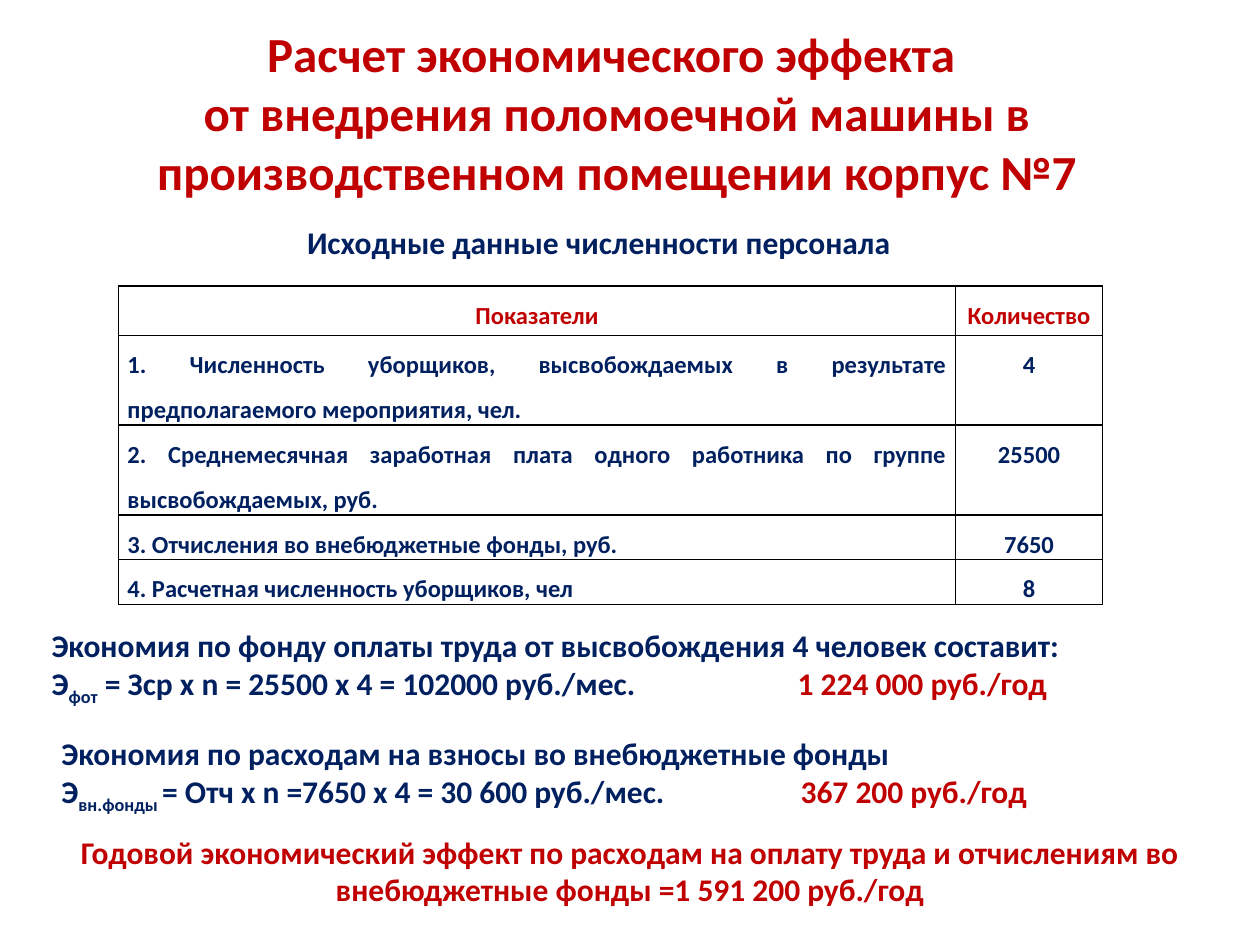
from lxml.etree import SubElement
from pptx import Presentation
from pptx.dml.color import RGBColor
from pptx.enum.text import MSO_ANCHOR, MSO_AUTO_SIZE, PP_ALIGN
from pptx.oxml.ns import qn
from pptx.util import Cm, Pt

# Content
COLORS = {"red": "C00000", "navy": "002060", "line": "000000"}
TITLE = ("Расчет экономического эффекта \vот внедрения поломоечной машины в "
         "производственном помещении корпус №7")
HEAD = "Исходные данные численности персонала"
ROWS = [
    ("Показатели", "Количество"),
    ("1. Численность уборщиков, высвобождаемых в результате "
     "предполагаемого мероприятия, чел.", "4"),
    ("2. Среднемесячная заработная плата одного работника по группе "
     "высвобождаемых, руб.", "25500"),
    ("3. Отчисления во внебюджетные фонды, руб.", "7650"),
    ("4. Расчетная численность уборщиков, чел", "8"),
]
WIDTHS = [16.87, 2.97]
HEIGHTS = [0.99, 1.81, 1.81, 0.9, 0.9]
# Savings: left, top, width, tab, heading, index, formula, yearly sum
SAVINGS = [
    (0.79, 12.5, 22.23, 15.04,
     "Экономия по фонду оплаты труда от высвобождения 4 человек составит:",
     "фот", " = Зср х n = 25500 х 4 = 102000 руб./мес.", "1 224 000 руб./год"),
    (0.99, 14.68, 23.22, 14.9,
     "Экономия по расходам на взносы во внебюджетные фонды",
     "вн.фонды ", "= Отч х n =7650 х 4 = 30 600 руб./мес.", "367 200 руб./год"),
]
TOTAL = ("Годовой экономический эффект по расходам на оплату труда и "
         "отчислениям во внебюджетные фонды =1 591 200 руб./год")


def paint(font, color):
    font.color.rgb = RGBColor.from_string(COLORS[color])


def style(para, size, color, align=PP_ALIGN.LEFT):
    para.alignment = align
    font = para.font
    font.name, font.size, font.bold = "Calibri", Pt(size), True
    paint(font, color)


def add_box(left, top, width, height=1.8, wrap=True):
    box = slide.shapes.add_textbox(Cm(left), Cm(top), Cm(width), Cm(height))
    box.text_frame.word_wrap = wrap
    return box.text_frame


def add_border(cell):
    props = cell._tc.get_or_add_tcPr()
    for i, side in enumerate(("a:lnL", "a:lnR", "a:lnT", "a:lnB")):
        line = props.makeelement(qn(side), {"w": str(Pt(1))})
        fill = SubElement(line, qn("a:solidFill"))
        SubElement(fill, qn("a:srgbClr"), val=COLORS["line"])
        props.insert(i, line)


deck = Presentation()
deck.slide_width, deck.slide_height = Cm(25.4), Cm(19.05)
slide = deck.slides.add_slide(deck.slide_layouts[5])

# Title
title = slide.shapes.title
title.left, title.top, title.width, title.height = map(Cm, (1, 0.5, 22.86, 3.5))
frame = title.text_frame
frame.text = TITLE
frame.auto_size = MSO_AUTO_SIZE.NONE
frame.vertical_anchor = MSO_ANCHOR.MIDDLE
style(frame.paragraphs[0], 28, "red", PP_ALIGN.CENTER)

# Table
table = slide.shapes.add_table(len(ROWS), len(WIDTHS), Cm(2.39), Cm(5.77),
                               Cm(sum(WIDTHS)), Cm(sum(HEIGHTS))).table
table.first_row = table.horz_banding = False
for col, width in zip(table.columns, WIDTHS):
    col.width = Cm(width)
for r, (row, height) in enumerate(zip(ROWS, HEIGHTS)):
    table.rows[r].height = Cm(height)
    for c, text in enumerate(row):
        cell = table.cell(r, c)
        cell.text = text
        cell.margin_left = cell.margin_right = Cm(0.18)
        cell.margin_top = cell.margin_bottom = 0
        cell.fill.background()
        add_border(cell)
        para = cell.text_frame.paragraphs[0]
        para.line_spacing = 1.5
        body = r > 0 and c == 0
        style(para, 14, "navy" if r else "red",
              PP_ALIGN.JUSTIFY if body else PP_ALIGN.CENTER)

# Table heading
frame = add_box(5.94, 4.37, 12.37, 1.02, wrap=False)
frame.text = HEAD
style(frame.paragraphs[0], 18, "navy")

# Savings with a yearly sum at the tab stop
for left, top, width, tab, head, index, formula, total in SAVINGS:
    frame = add_box(left, top, width)
    frame.text = head
    style(frame.paragraphs[0], 18, "navy")
    para = frame.add_paragraph()
    tabs = SubElement(para._p.get_or_add_pPr(), qn("a:tabLst"))
    SubElement(tabs, qn("a:tab"), pos=str(Cm(tab)), algn="l")
    style(para, 18, "navy")
    runs = [para.add_run() for _ in range(4)]
    for run, text in zip(runs, ("Э", index, formula + "\t", total)):
        run.text = text
    runs[1]._r.get_or_add_rPr().set("baseline", "-25000")
    paint(runs[3].font, "red")

# Overall effect
frame = add_box(0, 16.66, 25.4)
frame.text = TOTAL
style(frame.paragraphs[0], 18, "red", PP_ALIGN.CENTER)

deck.save("out.pptx")
